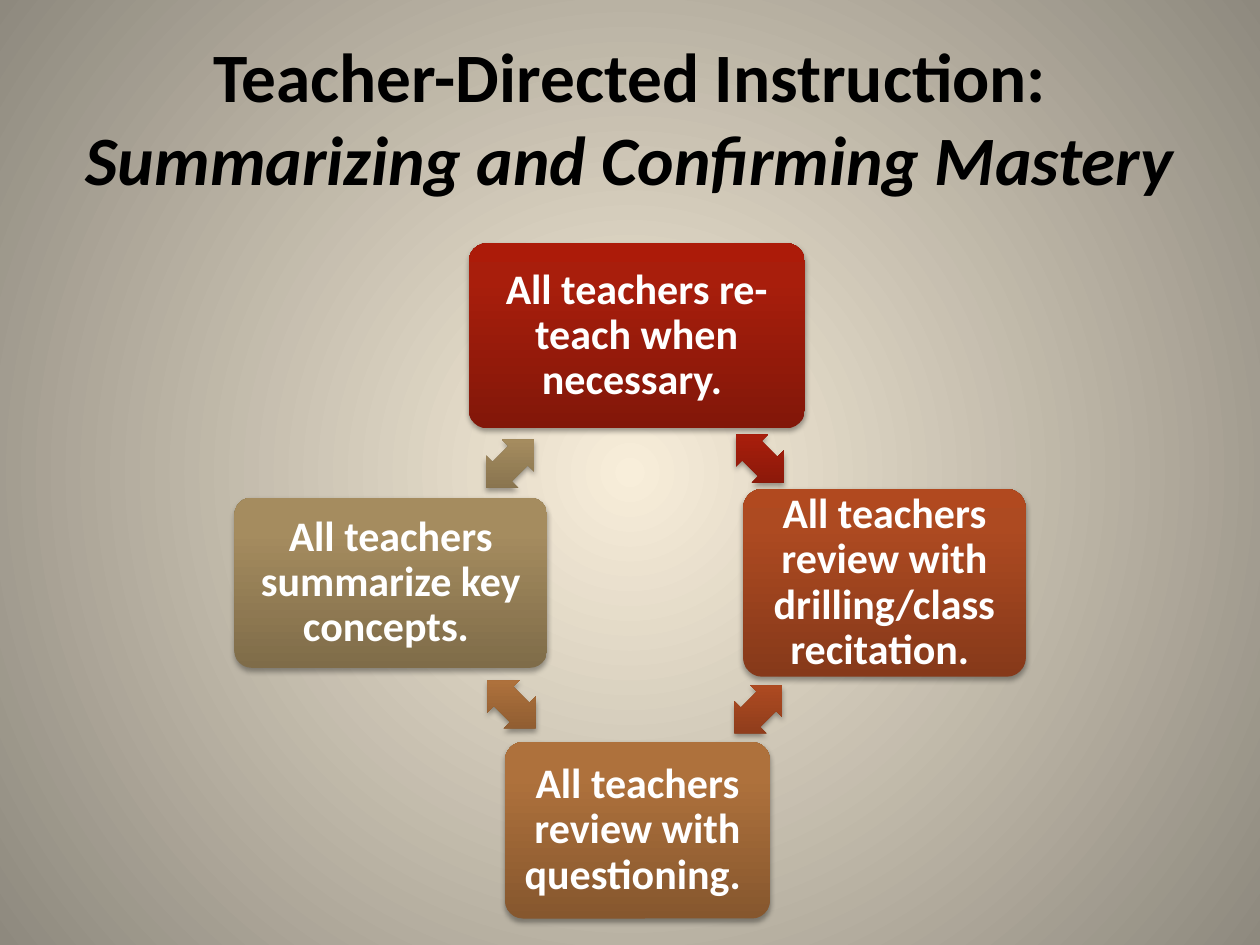
from lxml import etree
from pptx import Presentation
from pptx.dml.color import RGBColor
from pptx.enum.shapes import MSO_SHAPE
from pptx.enum.text import MSO_ANCHOR, MSO_AUTO_SIZE, PP_ALIGN
from pptx.oxml import parse_xml
from pptx.oxml.ns import nsdecls
from pptx.util import Pt

ROUNDED = MSO_SHAPE.ROUNDED_RECTANGLE
DOUBLE_ARROW = MSO_SHAPE.LEFT_RIGHT_ARROW
CENTER = PP_ALIGN.CENTER
MIDDLE = MSO_ANCHOR.MIDDLE
NO_AUTOFIT = MSO_AUTO_SIZE.NONE
TITLE_ONLY = 5

TITLE_BOX = (36, 21.6, 648, 90)
CYCLE_BOX = (134, 139)
ARROW_SIZE = (38.9, 25.9)

# Clockwise from the top: wording, (left, top, width, height) inside the cycle,
# centre of the arrow that follows, gradient from bottom to top.
STEPS = [
    ("All teachers re-teach when necessary. ", (133.8, 0, 192.2, 105.8),
     (300.2, 123.1), ("821709", "A81E0C", "AC1B09")),
    ("All teachers review with drilling/class recitation. ",
     (290.8, 140.4, 161.3, 107.3), (299.4, 266.4), ("86391A", "AD4A21", "B1491F")),
    ("All teachers review with questioning. ", (154.7, 285.1, 151.2, 100.8),
     (158.3, 263.5), ("86572E", "AE713C", "B1713A")),
    ("All teachers summarize key concepts. ", (0, 145.4, 178.6, 97.2),
     (157.6, 126), ("7F6C49", "A58C5F", "A78D5E")),
]


def color(hex_code):
    return RGBColor.from_string(hex_code)


def gradient(stops, direction):
    """Gradient fill element from (percent, hex) stops and a direction element."""
    stop_list = "".join(
        f'<a:gs pos="{percent * 1000}"><a:srgbClr val="{color(code)}"/></a:gs>'
        for percent, code in stops)
    return parse_xml(f'<a:gradFill {nsdecls("a")} rotWithShape="0">'
                     f'<a:gsLst>{stop_list}</a:gsLst>{direction}</a:gradFill>')


def soft_shadow():
    effects = parse_xml(f'<a:effectLst {nsdecls("a")}/>')
    shadow = etree.SubElement(
        effects, effects.tag.replace("effectLst", "outerShdw"),
        blurRad=str(Pt(3.1)), dist=str(Pt(1.8)), dir="5400000", rotWithShape="0")
    shadow.append(parse_xml(f'<a:srgbClr {nsdecls("a")} val="000000">'
                            '<a:alpha val="35000"/></a:srgbClr>'))
    return effects


def add_text(paragraph, text, size, hex_code, bold=True, italic=False):
    run = paragraph.add_run()
    run.text = text
    run.font.name = "Calibri"
    run.font.size = Pt(size)
    run.font.bold = bold
    run.font.italic = italic
    run.font.color.rgb = color(hex_code)


def add_glossy_shape(slide, preset, box, adjustments, tones):
    shape = slide.shapes.add_shape(preset, *map(Pt, box))
    for index, value in enumerate(adjustments):
        shape.adjustments[index] = value
    shape.line.fill.background()
    outline = shape.line._get_or_add_ln()
    outline.addprevious(gradient(zip((0, 80, 100), tones),
                                 '<a:lin ang="16200000" scaled="0"/>'))
    outline.addnext(soft_shadow())
    return shape


def paint_background(slide):
    slide.background.fill.solid()
    properties = slide._element.cSld.bg.bgPr
    properties.replace(properties[0], gradient(
        [(0, "F8EEDA"), (100, "8E897E")],
        '<a:path path="circle"><a:fillToRect l="50000" t="50000" r="50000" b="50000"/></a:path>'))


def place_title(slide, box):
    title = slide.shapes.title
    title.left, title.top, title.width, title.height = map(Pt, box)
    frame = title.text_frame
    frame.word_wrap = True
    frame.auto_size = NO_AUTOFIT
    frame.vertical_anchor = MIDDLE
    heading = frame.paragraphs[0]
    heading.alignment = CENTER
    add_text(heading, "Teacher-Directed Instruction:", 39.6, "000000")
    heading.add_line_break()
    add_text(heading, "Summarizing and Confirming Mastery", 39.6, "000000", italic=True)


def add_step(slide, box, wording, tones):
    step = add_glossy_shape(slide, ROUNDED, box, [0.1], tones)
    frame = step.text_frame
    frame.word_wrap = True
    frame.vertical_anchor = MIDDLE
    frame.margin_left = frame.margin_right = Pt(4)
    frame.margin_top = frame.margin_bottom = Pt(4)
    paragraph = frame.paragraphs[0]
    paragraph.alignment = CENTER
    paragraph.line_spacing = 0.9
    add_text(paragraph, wording, 24, "FFFFFF")


def draw_cycle(slide, origin):
    left, top = origin
    arrow_width, arrow_height = ARROW_SIZE
    for index, (wording, (x, y, width, height), (cx, cy), tones) in enumerate(STEPS):
        add_step(slide, (left + x, top + y, width, height), wording, tones)
        arrow_box = (left + cx - arrow_width / 2, top + cy - arrow_height / 2, *ARROW_SIZE)
        arrow = add_glossy_shape(slide, DOUBLE_ARROW, arrow_box, [0.6, 0.5], tones)
        arrow.rotation = 45 + 90 * index


def main():
    deck = Presentation()
    deck.slide_width, deck.slide_height = Pt(720), Pt(540)
    slide = deck.slides.add_slide(deck.slide_layouts[TITLE_ONLY])
    paint_background(slide)
    place_title(slide, TITLE_BOX)
    draw_cycle(slide, CYCLE_BOX)
    deck.save("out.pptx")


if __name__ == "__main__":
    main()
